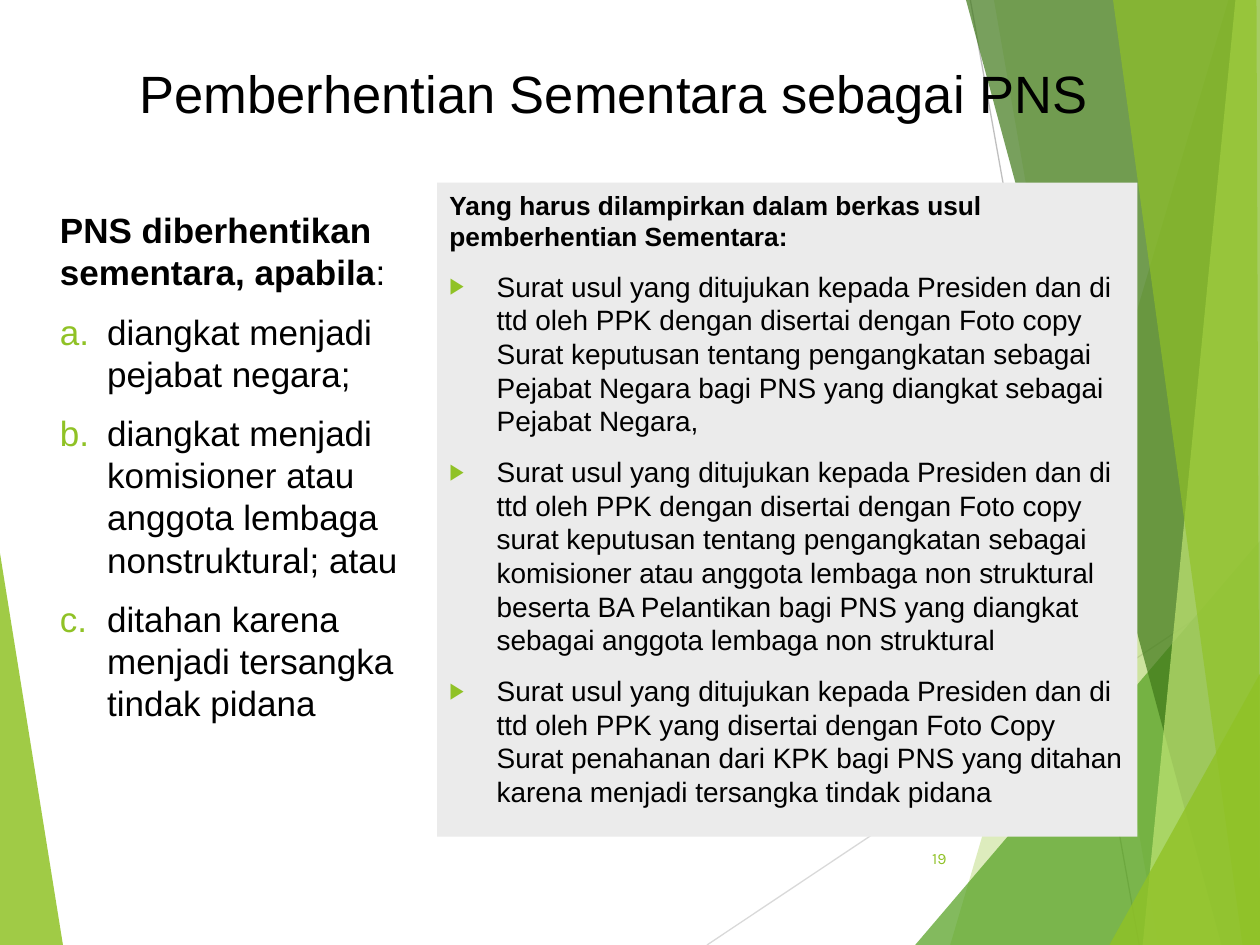
"""Builds a slide on the temporary suspension of civil servants."""
import pptx
import pptx.util
import pptx.dml.color
import pptx.enum.shapes
import pptx.enum.text
import pptx.oxml.ns
import lxml.etree

Pt = pptx.util.Pt
ALIGN = pptx.enum.text.PP_ALIGN
ANCHOR = pptx.enum.text.MSO_ANCHOR
SHAPE = pptx.enum.shapes.MSO_SHAPE
W, H = 720, 540
GREEN, BLACK = "90C226", "000000"

TITLE = "Pemberhentian Sementara sebagai PNS"
NUMBER = "19"
REASONS_HEAD = [("PNS diberhentikan sementara, apabila", True), (":", False)]
REASONS = [
    "diangkat menjadi pejabat negara;",
    "diangkat menjadi komisioner atau anggota lembaga nonstruktural; atau",
    "ditahan karena menjadi tersangka tindak pidana",
]
FILES_HEAD = [("Yang harus dilampirkan dalam berkas usul pemberhentian Sementara:", True)]
FILES = [
    "Surat usul yang ditujukan kepada Presiden dan di ttd oleh PPK dengan disertai dengan Foto copy "
    "Surat keputusan tentang pengangkatan sebagai Pejabat Negara bagi PNS yang diangkat sebagai "
    "Pejabat Negara,",
    "Surat usul yang ditujukan kepada Presiden dan di ttd oleh PPK dengan disertai dengan Foto copy "
    "surat keputusan tentang pengangkatan sebagai komisioner atau anggota lembaga non struktural "
    "beserta BA Pelantikan bagi PNS yang diangkat sebagai anggota lembaga non struktural",
    "Surat usul yang ditujukan kepada Presiden dan di ttd oleh PPK yang disertai dengan Foto Copy "
    "Surat penahanan dari KPK bagi PNS yang ditahan karena menjadi tersangka tindak pidana",
]

LEFT_FACET = ([(0, 316), (35.5, H), (0, H)], GREEN, 85)
RAYS = [((404, H), (W, 329), "D9D9D9"), ((554.5, 0), (651, H), "BFBFBF")]
RIGHT_FACETS = [
    ([(702, 0), (543, H), (W, H), (W, 0)], GREEN, 30),
    ([(567.5, 0), (662, H), (W, H), (W, 0)], GREEN, 20),
    ([(523, H), (W, 309), (W, H)], "54A021", 72),
    ([(552, 0), (698.5, H), (W, H), (W, 0)], "3F7819", 70),
    ([(706, 0), (653, H), (W, H), (W, 0)], "C0E474", 70),
    ([(636, 0), (710, H), (W, H), (718.5, 0)], GREEN, 65),
    ([(634.5, H), (W, 385), (W, H)], GREEN, 80),
]
LETTERS = [("buAutoNum", {"type": "alphaLcPeriod"})]
ARROWS = [("buSzPct", {"val": "80000"}), ("buFont", {"typeface": "Arial"}), ("buChar", {"char": "▶"})]


def rgb(value):
    return pptx.dml.color.RGBColor.from_string(value)


def add_xml(parent, tag, **attrs):
    return lxml.etree.SubElement(parent, pptx.oxml.ns.qn("a:" + tag), attrs)


def add_facet(s, points, color, opacity):
    builder = s.shapes.build_freeform(*points[0], scale=Pt(1))
    builder.add_line_segments(points[1:])
    sp = builder.convert_to_shape()
    sp.shadow.inherit = False
    sp.line.fill.background()
    sp.fill.solid()
    sp.fill.fore_color.rgb = rgb(color)
    add_xml(sp.fill._xPr.find(".//" + pptx.oxml.ns.qn("a:srgbClr")), "alpha", val=str(opacity * 1000))


def add_ray(s, start, end, color):
    line = s.shapes.add_connector(pptx.enum.shapes.MSO_CONNECTOR.STRAIGHT, *map(Pt, start + end))
    line.line.color.rgb = rgb(color)
    line.line.width = Pt(0.75)
    add_xml(line._element.spPr, "effectLst")


def add_run(p, text, size, color=BLACK, bold=False, font="Arial"):
    r = p.add_run()
    r.text = text
    r.font.name, r.font.size, r.font.bold = font, Pt(size), bold
    r.font.color.rgb = rgb(color)


def add_label(s, box, align, text, size, **style):
    tf = s.shapes.add_textbox(*map(Pt, box)).text_frame
    tf.word_wrap = True
    tf.vertical_anchor = ANCHOR.MIDDLE
    p = tf.paragraphs[0]
    p.alignment = align
    add_run(p, text, size, **style)


def add_panel(s, kind, box, fill, head, head_size, items, size, bullet):
    sp = s.shapes.add_shape(kind, *map(Pt, box))
    sp.shadow.inherit = False
    sp.line.fill.background()
    if fill:
        sp.fill.solid()
        sp.fill.fore_color.rgb = rgb(fill)
    else:
        sp.fill.background()
    tf = sp.text_frame
    tf.word_wrap = True
    tf.vertical_anchor = ANCHOR.TOP
    for i, runs in enumerate([head] + [[(item, False)] for item in items]):
        p = tf.paragraphs[0] if i == 0 else tf.add_paragraph()
        p.alignment = ALIGN.LEFT
        p.space_before = Pt(10)
        if i:
            pPr = p._p.get_or_add_pPr()
            pPr.set("marL", str(Pt(27)))
            pPr.set("indent", str(-Pt(27)))
            add_xml(add_xml(pPr, "buClr"), "srgbClr", val=GREEN)
            for tag, attrs in bullet:
                add_xml(pPr, tag, **attrs)
        for text, bold in runs:
            add_run(p, text, size if i else head_size, bold=bold)


def main():
    prs = pptx.Presentation()
    prs.slide_width, prs.slide_height = Pt(W), Pt(H)
    s = prs.slides.add_slide(prs.slide_layouts[6])
    add_facet(s, *LEFT_FACET)
    for ray in RAYS:
        add_ray(s, *ray)
    for facet in RIGHT_FACETS:
        add_facet(s, *facet)
    add_label(s, (30, 19.5, 641.5, 67), ALIGN.CENTER, TITLE, 30)
    add_panel(s, SHAPE.RECTANGLE, (249.75, 104.4, 400.25, 373.7), "EBEBEB",
              FILES_HEAD, 15, FILES, 16, ARROWS)
    add_panel(s, SHAPE.ROUND_2_DIAG_RECTANGLE, (15.75, 104.4, 234, 378), None,
              REASONS_HEAD, 20, REASONS, 20, LETTERS)
    add_label(s, (507.6, 476, 40.3, 28.8), ALIGN.RIGHT, NUMBER, 9, color=GREEN, font="Karla")
    prs.save("out.pptx")


if __name__ == "__main__":
    main()
